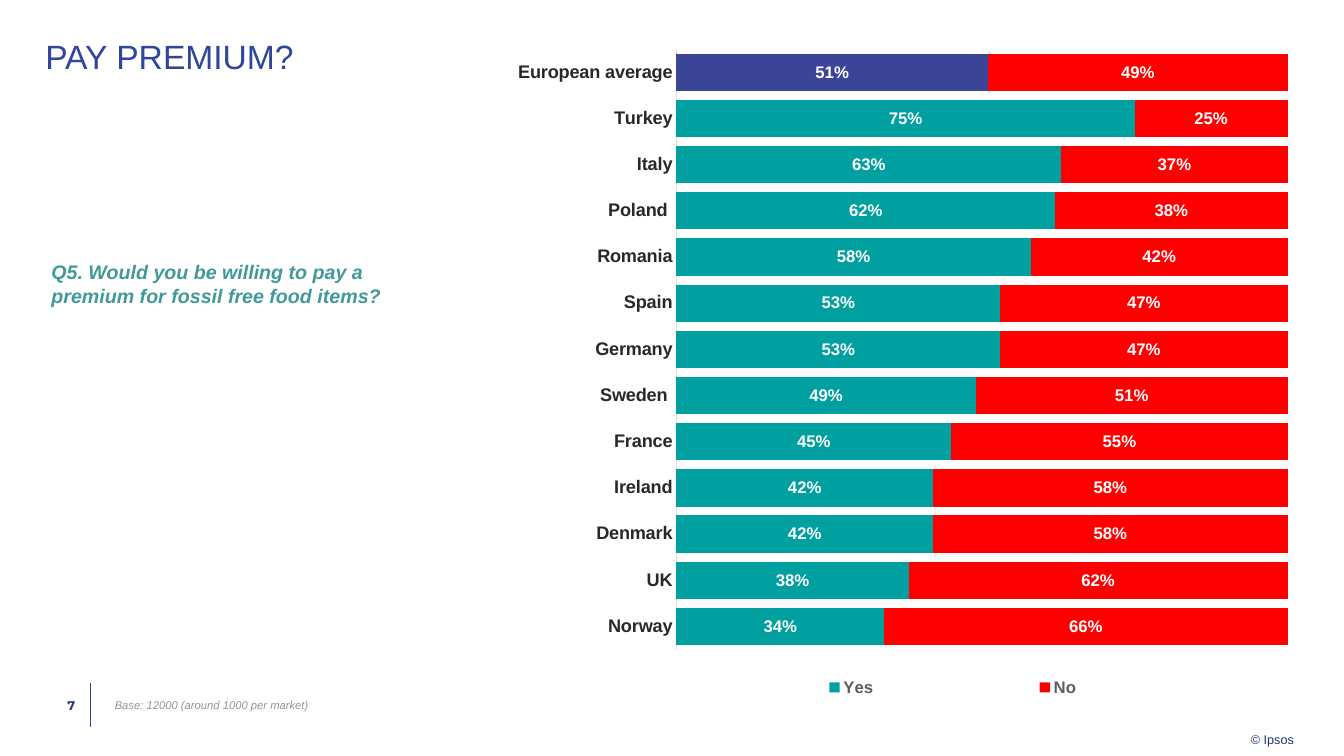
import dataclasses

import lxml.etree
import pptx
import pptx.chart.data
import pptx.dml.color
import pptx.enum.chart
import pptx.enum.shapes
import pptx.enum.text
import pptx.oxml.ns
import pptx.util
from pptx.chart.chart import Chart
from pptx.slide import Slide
from pptx.text.text import Font

WIDTH, HEIGHT = pptx.util.Inches(13.33), pptx.util.Inches(7.5)
COLUMNS, ROWS = 80, 45
FOOTER_ROW, FOOTER_ROWS = 40.68, 2.6
DIVIDER_COLUMN = 5.4

COLORS = {
    "title": "2F469C", "navy": "233475", "question": "419999", "base": "939393",
    "yes": "009FA0", "no": "FF0000", "average": "3B4496", "white": "FFFFFF",
    "label": "282828", "legend": "5E5E5E", "axis": "DFDFDF",
}

YES_SHARES = {
    "European average": 0.51, "Turkey": 0.75, "Italy": 0.63, "Poland ": 0.62,
    "Romania": 0.58, "Spain": 0.53, "Germany": 0.53, "Sweden ": 0.49,
    "France": 0.45, " Ireland": 0.42, "Denmark": 0.42, "UK": 0.38, "Norway": 0.34,
}


@dataclasses.dataclass(frozen=True)
class Area:
    """A rectangle in grid columns and rows."""
    column: float
    row: float
    columns: float
    rows: float

    def lengths(self) -> tuple[int, int, int, int]:
        return (across(self.column), down(self.row), across(self.columns), down(self.rows))


@dataclasses.dataclass(frozen=True)
class Label:
    text: str
    area: Area
    size: float
    color: str
    font: str = "Arial"
    bold: bool = False
    italic: bool = False
    middle: bool = False
    right: bool = False
    wrap: bool = True
    line_spacing: float = 1.0
    # Left, top, right and bottom, in inches
    insets: tuple[float, float, float, float] = (0, 0, 0, 0)


LABELS = [
    Label("© Ipsos", Area(74.46, 43.32, 2.58, 1.14), 9, "navy", wrap=False,
          insets=(0, 0.04, 0, 0)),
    Label("7 ", Area(2.7, FOOTER_ROW, 2.7, FOOTER_ROWS), 9, "navy", font="Montserrat",
          bold=True, middle=True, right=True, insets=(0, 0, 0.12, 0)),
    Label("PAY PREMIUM?", Area(2.7, 2.4, 28.14, 2.52), 24, "title", line_spacing=0.9),
    Label("Q5. Would you be willing to pay a premium for fossil free food items?",
          Area(3.06, 15.48, 19.86, 2.82), 14, "question", bold=True, italic=True),
    Label("Base: 12000 (around 1000 per market)",
          Area(6.24, FOOTER_ROW, 16.68, FOOTER_ROWS), 8, "base", italic=True,
          middle=True, insets=(0.1, 0.05, 0.1, 0.05)),
]


def across(columns: float) -> int:
    return round(WIDTH * columns / COLUMNS)


def down(rows: float) -> int:
    return round(HEIGHT * rows / ROWS)


def rgb(name: str) -> pptx.dml.color.RGBColor:
    return pptx.dml.color.RGBColor.from_string(COLORS[name])


def style_font(font: Font, size: float, color: str, name: str = "Arial",
               bold: bool = False, italic: bool = False) -> None:
    font.name, font.size = name, pptx.util.Pt(size)
    font.bold, font.italic = bold, italic
    font.color.rgb = rgb(color)


def add_label(slide: Slide, label: Label) -> None:
    frame = slide.shapes.add_textbox(*label.area.lengths()).text_frame
    frame.word_wrap = label.wrap
    (frame.margin_left, frame.margin_top,
     frame.margin_right, frame.margin_bottom) = map(pptx.util.Inches, label.insets)
    anchors = pptx.enum.text.MSO_ANCHOR
    frame.vertical_anchor = anchors.MIDDLE if label.middle else anchors.TOP
    frame.text = label.text
    paragraph = frame.paragraphs[0]
    alignments = pptx.enum.text.PP_ALIGN
    paragraph.alignment = alignments.RIGHT if label.right else alignments.LEFT
    paragraph.line_spacing = label.line_spacing
    style_font(paragraph.runs[0].font, label.size, label.color, label.font,
               label.bold, label.italic)


def add_divider(slide: Slide) -> None:
    x = across(DIVIDER_COLUMN)
    divider = slide.shapes.add_connector(
        pptx.enum.shapes.MSO_CONNECTOR.STRAIGHT,
        x, down(FOOTER_ROW), x, down(FOOTER_ROW + FOOTER_ROWS))
    divider.line.color.rgb = rgb("title")
    divider.line.width = pptx.util.Pt(0.5)
    properties = divider.element.find(pptx.oxml.ns.qn("p:spPr"))
    lxml.etree.SubElement(properties, pptx.oxml.ns.qn("a:effectLst"))


def place_in_chart(part: lxml.etree.ElementBase, before: tuple[str, ...], inner: bool,
                   x: float, y: float, w: float, h: float) -> None:
    """Fix a chart part's position, in shares of the chart's size."""
    qn = pptx.oxml.ns.qn
    for old_layout in part.findall(qn("c:layout")):
        part.remove(old_layout)
    layout = lxml.etree.Element(qn("c:layout"))
    manual = lxml.etree.SubElement(layout, qn("c:manualLayout"))
    settings = {"layoutTarget": "inner"} if inner else {}
    settings |= {"xMode": "edge", "yMode": "edge", "x": x, "y": y, "w": w, "h": h}
    for tag, value in settings.items():
        lxml.etree.SubElement(manual, qn(f"c:{tag}")).set("val", str(value))
    following = next(child for child in part if child.tag in map(qn, before))
    following.addprevious(layout)


def style_axes(chart: Chart) -> None:
    countries = chart.category_axis
    countries.reverse_order = True
    countries.has_major_gridlines = False
    countries.major_tick_mark = pptx.enum.chart.XL_TICK_MARK.NONE
    countries.format.line.color.rgb = rgb("axis")
    countries.format.line.width = pptx.util.Pt(0.75)
    style_font(countries.tick_labels.font, 13, "label", bold=True)
    shares = chart.value_axis
    shares.visible = False
    shares.has_major_gridlines = False
    shares.minimum_scale, shares.maximum_scale = 0, 1


def add_premium_chart(slide: Slide) -> None:
    chart_data = pptx.chart.data.CategoryChartData(number_format="0%")
    chart_data.categories = list(YES_SHARES)
    chart_data.add_series("Yes", list(YES_SHARES.values()))
    chart_data.add_series("No", [round(1 - share, 2) for share in YES_SHARES.values()])
    chart = slide.shapes.add_chart(
        pptx.enum.chart.XL_CHART_TYPE.BAR_STACKED_100,
        *Area(30.84, 2.4, 46.5, 40.98).lengths(), chart_data).chart
    chart.has_title = False
    style_font(chart.font, 10, "label")
    style_axes(chart)

    plot = chart.plots[0]
    plot.gap_width, plot.overlap = 24, 100
    plot.vary_by_categories = False
    for series, color in zip(plot.series, ("yes", "no")):
        series.format.fill.solid()
        series.format.fill.fore_color.rgb = rgb(color)
        labels = series.data_labels
        labels.show_value = True
        labels.number_format, labels.number_format_is_linked = "0%", False
        labels.position = pptx.enum.chart.XL_LABEL_POSITION.CENTER
        style_font(labels.font, 12, "white", bold=True)
    average_fill = plot.series[0].points[0].format.fill
    average_fill.solid()
    average_fill.fore_color.rgb = rgb("average")

    chart.has_legend = True
    legend = chart.legend
    legend.position = pptx.enum.chart.XL_LEGEND_POSITION.BOTTOM
    legend.include_in_layout = False
    style_font(legend.font, 12, "legend", bold=True)
    plot_area = chart.element.find(".//" + pptx.oxml.ns.qn("c:plotArea"))
    place_in_chart(plot_area, ("c:barChart",), True, 0.2, 0.013, 0.785, 0.872)
    legend_part = chart.element.find(".//" + pptx.oxml.ns.qn("c:legend"))
    place_in_chart(legend_part, ("c:overlay", "c:txPr"), False, 0.19, 0.91, 0.73, 0.06)


def main() -> None:
    presentation = pptx.Presentation()
    presentation.slide_width, presentation.slide_height = WIDTH, HEIGHT
    slide = presentation.slides.add_slide(presentation.slide_layouts[6])
    add_divider(slide)
    add_premium_chart(slide)
    for label in LABELS:
        add_label(slide, label)
    presentation.save("out.pptx")


if __name__ == "__main__":
    main()
